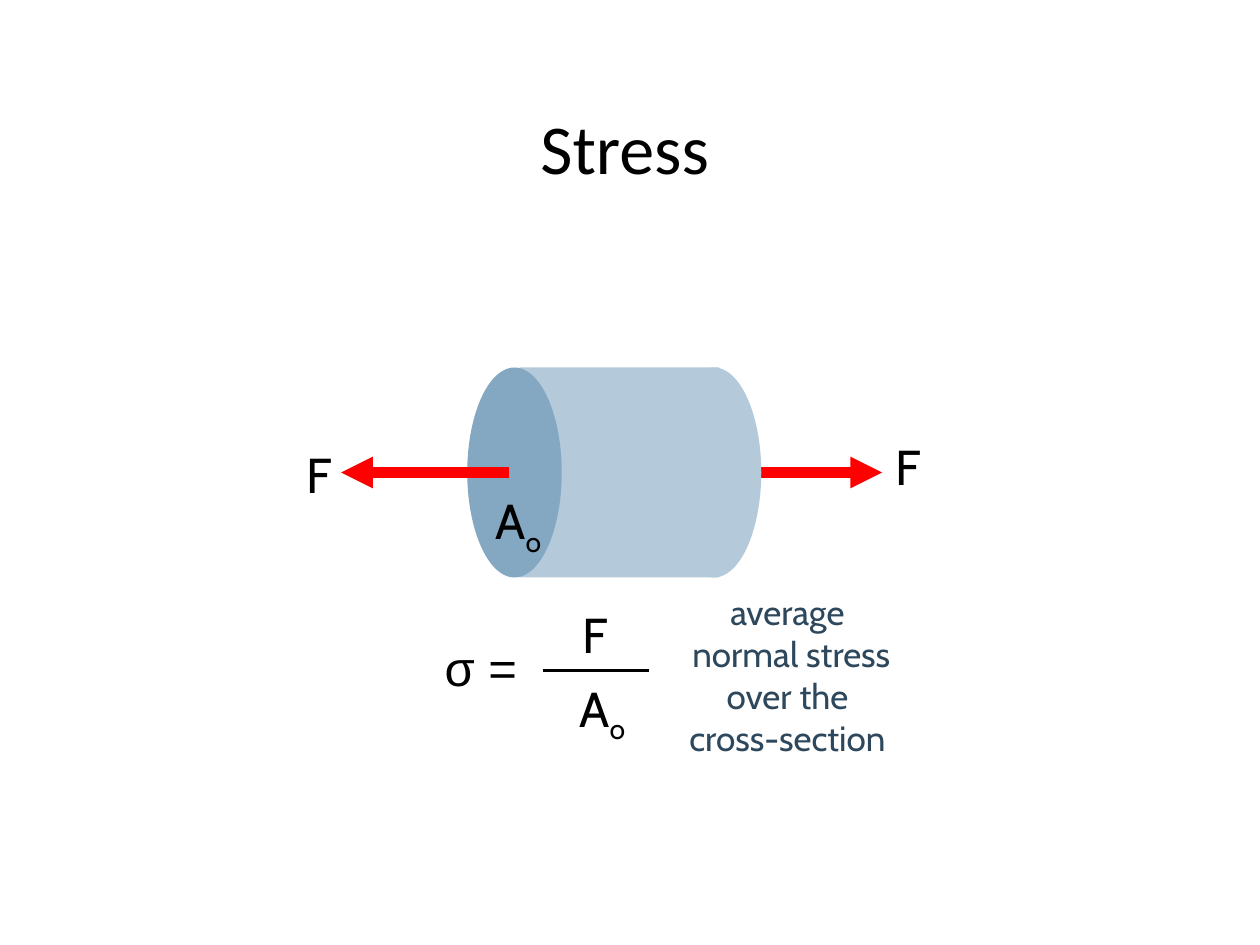
import pptx
import pptx.util
import pptx.dml.color
import pptx.enum.shapes
import pptx.enum.text
import pptx.oxml
import pptx.oxml.ns
from lxml import etree

Pt = pptx.util.Pt
RGBColor = pptx.dml.color.RGBColor
SHAPE = pptx.enum.shapes.MSO_SHAPE
ALIGN = pptx.enum.text.PP_ALIGN

COLORS = {
    "text": "000000",
    "note": "2D485D",
    "body": "B4CADA",
    "face": "84A7C2",
    "force": "FF0000",
}


def write_text(frame, text, subscript="", size=28, font="Cabin", color="text",
               align=ALIGN.LEFT, wrap=False):
    """Fill the frame, one paragraph a line; the subscript follows the last."""
    frame.word_wrap = wrap
    frame.text = text
    if subscript:
        lowered = frame.paragraphs[-1].add_run()
        lowered.text = subscript
        lowered._r.get_or_add_rPr().set("baseline", "-25000")
    for paragraph in frame.paragraphs:
        paragraph.alignment = align
        for run in paragraph.runs:
            run.font.size = Pt(size)
            run.font.name = font
            run.font.color.rgb = RGBColor.from_string(COLORS[color])


def draw_line(start, end, y, color, width, arrow=False):
    line = slide.shapes.add_connector(
        pptx.enum.shapes.MSO_CONNECTOR.STRAIGHT, Pt(start), Pt(y), Pt(end), Pt(y))
    line.line.color.rgb = RGBColor.from_string(COLORS[color])
    line.line.width = Pt(width)
    if arrow:
        etree.SubElement(line.line._get_or_add_ln(),
                         pptx.oxml.ns.qn("a:tailEnd"), type="triangle")
    etree.SubElement(line._element.spPr, pptx.oxml.ns.qn("a:effectLst"))


presentation = pptx.Presentation()
presentation.slide_width = Pt(720)
presentation.slide_height = Pt(540)
slide = presentation.slides.add_slide(presentation.slide_layouts[5])

title = slide.shapes.title
title.left, title.top, title.width, title.height = Pt(30), Pt(12), Pt(654), Pt(144)
title.text_frame.vertical_anchor = pptx.enum.text.MSO_ANCHOR.MIDDLE
write_text(title.text_frame, "Stress", size=40, font="Calibri",
           align=ALIGN.CENTER, wrap=True)

# Cylinder under tension; the right arrow starts behind its far end
axis_y = 270
cylinder_height = 120
draw_line(408, 504, axis_y, "force", 6, arrow=True)
for kind, left, width, color in [
    (SHAPE.OVAL, 381, 54, "body"),
    (SHAPE.RECTANGLE, 297, 114, "body"),
    (SHAPE.OVAL, 267, 54, "face"),
]:
    part = slide.shapes.add_shape(kind, Pt(left), Pt(axis_y - cylinder_height / 2),
                                  Pt(width), Pt(cylinder_height))
    part.shadow.inherit = False
    part.fill.solid()
    part.fill.fore_color.rgb = RGBColor.from_string(COLORS[color])
    part.line.fill.background()
draw_line(291, 195, axis_y, "force", 6, arrow=True)

# Fraction bar of the formula
draw_line(310.5, 371, 383, "text", 1.5)

note = {"size": 20, "color": "note", "align": ALIGN.CENTER, "wrap": True}
for text, left, top, width, height, style in [
    ("F", 168, 250.5, 29.5, 41, {}),
    ("A", 276, 277, 42.5, 41, {"subscript": "o"}),
    ("F", 504.5, 246, 29.5, 41, {}),
    ("σ =", 247, 361, 71, 41, {"font": "Arial", "wrap": True}),
    ("F", 325.5, 342, 29.5, 41, {}),
    ("A", 324, 384, 42.5, 41, {"subscript": "o"}),
    ("average\n normal stress\nover the\ncross-section", 354, 334, 192, 104.5, note),
]:
    label = slide.shapes.add_textbox(Pt(left), Pt(top), Pt(width), Pt(height))
    write_text(label.text_frame, text, **style)

presentation.save("out.pptx")
